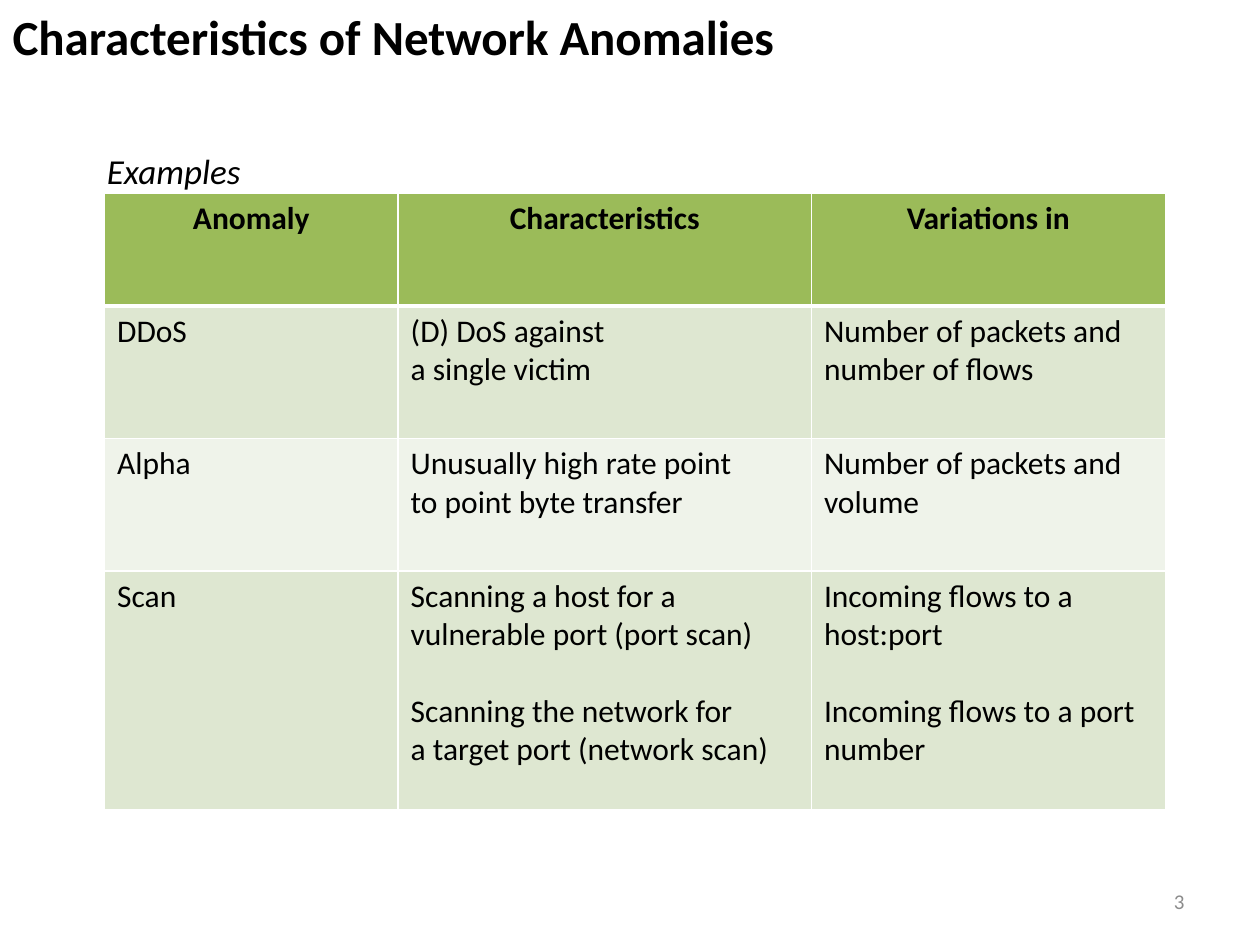
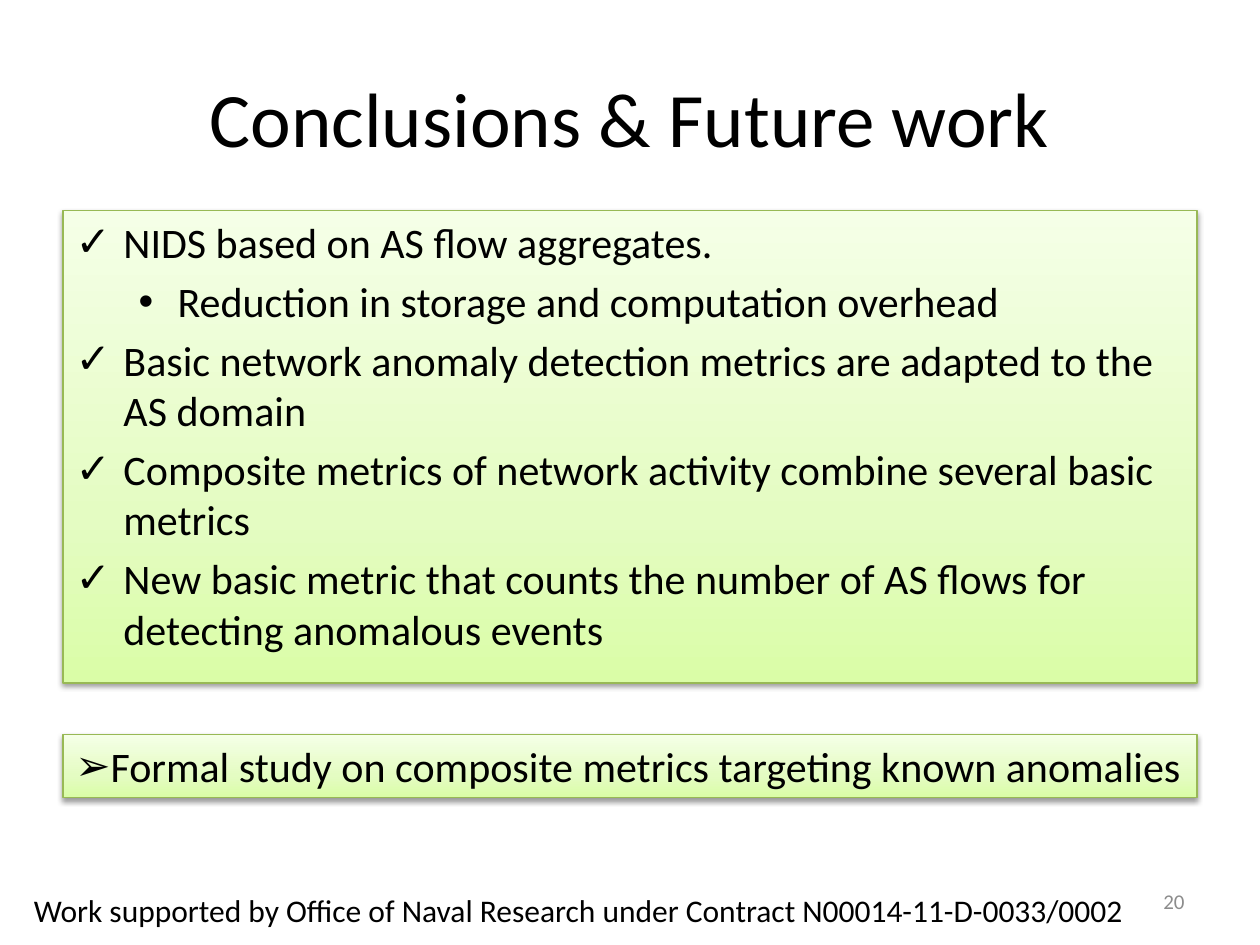
from dataclasses import dataclass

from pptx import Presentation
from pptx.dml.color import RGBColor
from pptx.enum.shapes import MSO_SHAPE
from pptx.enum.text import MSO_ANCHOR as Anchor, MSO_AUTO_SIZE as AutoSize, PP_ALIGN as Align
from pptx.oxml import parse_xml
from pptx.oxml.ns import nsdecls
from pptx.util import Inches, Pt


@dataclass(frozen=True)
class Theme:
    font: str = "Calibri"
    ink: str = "000000"
    muted: str = "8C8C8C"
    white: str = "FFFFFF"
    header: str = "9BBB59"
    bands: tuple = ("DEE7D1", "EFF3EA")
    panel_line: str = "98B955"
    panel_stops: tuple = ((0, "DAFDA7"), (35, "E4FCC2"), (100, "F5FFE7"))
    title: int = 44
    heading: int = 28
    body: int = 24
    caption: int = 20
    text: int = 18
    number: int = 12


@dataclass(frozen=True)
class Box:
    left: float
    top: float
    width: float
    height: float

    def inches(self):
        return [Inches(v) for v in (self.left, self.top, self.width, self.height)]


THEME = Theme()
NUMBER_BOX = Box(7.17, 6.95, 2.33, 0.4)

COLUMN_WIDTHS = (2.33, 3.28, 2.81)
ROW_HEIGHTS = (0.9, 1.05, 1.05, 1.9)
HEADINGS = ("Anomaly", "Characteristics", "Variations in")
ANOMALIES = (
    (("DDoS",),
     ("(D) DoS against\va single victim",),
     ("Number of packets and number of flows",)),
    (("Alpha",),
     ("Unusually high rate point\vto point byte transfer",),
     ("Number of packets and volume",)),
    (("Scan",),
     ("Scanning a host for a\vvulnerable port (port scan)",
      "Scanning the network for\va target port (network scan)"),
     ("Incoming flows to a host:port", "Incoming flows to a port number")),
)
CONCLUSIONS = (
    (0, "NIDS based on AS flow aggregates."),
    (1, "Reduction in storage and computation overhead"),
    (0, "Basic network anomaly detection metrics are adapted to the AS domain"),
    (0, "Composite metrics of network activity combine several basic metrics"),
    (0, "New basic metric that counts the number of AS flows for detecting anomalous events"),
)
BULLET_LEVELS = (("✓", 0.38, -0.38), ("•", 0.81, -0.31))


def rgb(color):
    return RGBColor.from_string(color)


def style(paragraph, size, color=THEME.ink, align=Align.LEFT, bold=False, italic=False):
    paragraph.alignment = align
    font = paragraph.font
    font.name, font.size, font.bold, font.italic = THEME.font, Pt(size), bold, italic
    font.color.rgb = rgb(color)


def write_paragraphs(frame, texts):
    for index, text in enumerate(texts):
        paragraph = frame.paragraphs[0] if index == 0 else frame.add_paragraph()
        paragraph.text = text
        yield paragraph


def set_bullet(paragraph, mark, margin=0, indent=0):
    properties = paragraph._p.get_or_add_pPr()
    properties.set("marL", str(Inches(margin)))
    properties.set("indent", str(Inches(indent)))
    properties.append(parse_xml(f'<a:buFont {nsdecls("a")} typeface="Arial"/>'))
    properties.append(parse_xml(f'<a:buChar {nsdecls("a")} char="{mark}"/>'))


def place(shape, box):
    shape.left, shape.top, shape.width, shape.height = box.inches()


def add_title(slide, box, text, size, align, anchor, bold=False):
    title = slide.shapes.title
    place(title, box)
    frame = title.text_frame
    frame.text = text
    frame.vertical_anchor, frame.auto_size = anchor, AutoSize.NONE
    style(frame.paragraphs[0], size, align=align, bold=bold)


def add_label(slide, box, text, size, anchor=Anchor.TOP, wrap=False, **look):
    frame = slide.shapes.add_textbox(*box.inches()).text_frame
    frame.text = text
    frame.word_wrap, frame.vertical_anchor = wrap, anchor
    style(frame.paragraphs[0], size, **look)


def add_slide_number(slide, number):
    add_label(slide, NUMBER_BOX, number, THEME.number, Anchor.MIDDLE, True,
              color=THEME.muted, align=Align.RIGHT)


def set_borders(cell, **widths):
    properties = cell._tc.get_or_add_tcPr()
    for side in "LRTB":
        properties.append(parse_xml(
            f'<a:ln{side} {nsdecls("a")} w="{Pt(widths.get(side, 1))}"><a:solidFill>'
            f'<a:srgbClr val="{THEME.white}"/></a:solidFill></a:ln{side}>'))


def fill_cell(cell, texts, color, align=Align.LEFT, bold=False, **borders):
    set_borders(cell, **borders)
    cell.fill.solid()
    cell.fill.fore_color.rgb = rgb(color)
    for index, paragraph in enumerate(write_paragraphs(cell.text_frame, texts)):
        if index:
            paragraph.space_before = Pt(22)
        style(paragraph, THEME.text, align=align, bold=bold)


def add_anomaly_table(slide, box):
    table = slide.shapes.add_table(len(ROW_HEIGHTS), len(COLUMN_WIDTHS), *box.inches()).table
    for column, width in zip(table.columns, COLUMN_WIDTHS):
        column.width = Inches(width)
    for row, height in zip(table.rows, ROW_HEIGHTS):
        row.height = Inches(height)
    for column, heading in enumerate(HEADINGS):
        fill_cell(table.cell(0, column), [heading], THEME.header, Align.CENTER, True, B=3)
    for row, anomaly in enumerate(ANOMALIES, 1):
        for column, texts in enumerate(anomaly):
            fill_cell(table.cell(row, column), texts, THEME.bands[(row - 1) % 2],
                      T=3 if row == 1 else 1)


def style_panel(shape):
    stops = "".join(f'<a:gs pos="{position * 1000}"><a:srgbClr val="{color}"/></a:gs>'
                    for position, color in THEME.panel_stops)
    properties = shape._element.spPr
    properties.append(parse_xml(
        f'<a:gradFill {nsdecls("a")} rotWithShape="1"><a:gsLst>{stops}</a:gsLst>'
        '<a:lin ang="16200000" scaled="0"/></a:gradFill>'))
    shape.line.color.rgb = rgb(THEME.panel_line)
    shape.line.width = Pt(0.75)
    properties.append(parse_xml(
        f'<a:effectLst {nsdecls("a")}><a:outerShdw blurRad="{Pt(3.1)}" dist="{Pt(1.6)}" '
        'dir="5400000" rotWithShape="0"><a:srgbClr val="000000"><a:alpha val="38000"/>'
        '</a:srgbClr></a:outerShdw></a:effectLst>'))
    frame = shape.text_frame
    frame.word_wrap, frame.vertical_anchor, frame.auto_size = True, Anchor.TOP, AutoSize.NONE


def add_conclusions(slide, box):
    panel = slide.placeholders[1]
    place(panel, box)
    style_panel(panel)
    levels, texts = zip(*CONCLUSIONS)
    for index, paragraph in enumerate(write_paragraphs(panel.text_frame, texts)):
        paragraph.level = levels[index]
        paragraph.space_before = Pt(4.8 if index else 0)
        set_bullet(paragraph, *BULLET_LEVELS[levels[index]])
        style(paragraph, THEME.body)


def add_future_work(slide, box):
    panel = slide.shapes.add_shape(MSO_SHAPE.RECTANGLE, *box.inches())
    style_panel(panel)
    paragraph = panel.text_frame.paragraphs[0]
    paragraph.text = "Formal study on composite metrics targeting known anomalies"
    set_bullet(paragraph, "➢")
    style(paragraph, THEME.body)


def build_anomalies_slide(deck):
    slide = deck.slides.add_slide(deck.slide_layouts[5])
    add_slide_number(slide, "3")
    add_title(slide, Box(0, 0, 6.32, 0.57), "Characteristics of Network Anomalies",
              THEME.heading, Align.LEFT, Anchor.TOP, bold=True)
    slide.shapes.title.text_frame.word_wrap = False
    add_anomaly_table(slide, Box(0.83, 1.53, sum(COLUMN_WIDTHS), sum(ROW_HEIGHTS)))
    add_label(slide, Box(0.75, 1.14, 1.27, 0.44), "Examples", THEME.caption, italic=True)


def build_conclusions_slide(deck):
    slide = deck.slides.add_slide(deck.slide_layouts[1])
    add_title(slide, Box(0.5, 0.3, 9, 1.25), "Conclusions & Future work",
              THEME.title, Align.CENTER, Anchor.MIDDLE)
    add_conclusions(slide, Box(0.5, 1.67, 9, 3.75))
    add_slide_number(slide, "20")
    add_label(slide, Box(0.17, 7.02, 8.95, 0.4),
              "Work supported by Office of Naval Research under Contract N00014-11-D-0033/0002",
              THEME.text)
    add_future_work(slide, Box(0.5, 5.83, 9, 0.5))


def main():
    deck = Presentation()
    deck.slide_width, deck.slide_height = Inches(10), Inches(7.5)
    build_anomalies_slide(deck)
    build_conclusions_slide(deck)
    deck.save("out.pptx")


if __name__ == "__main__":
    main()
